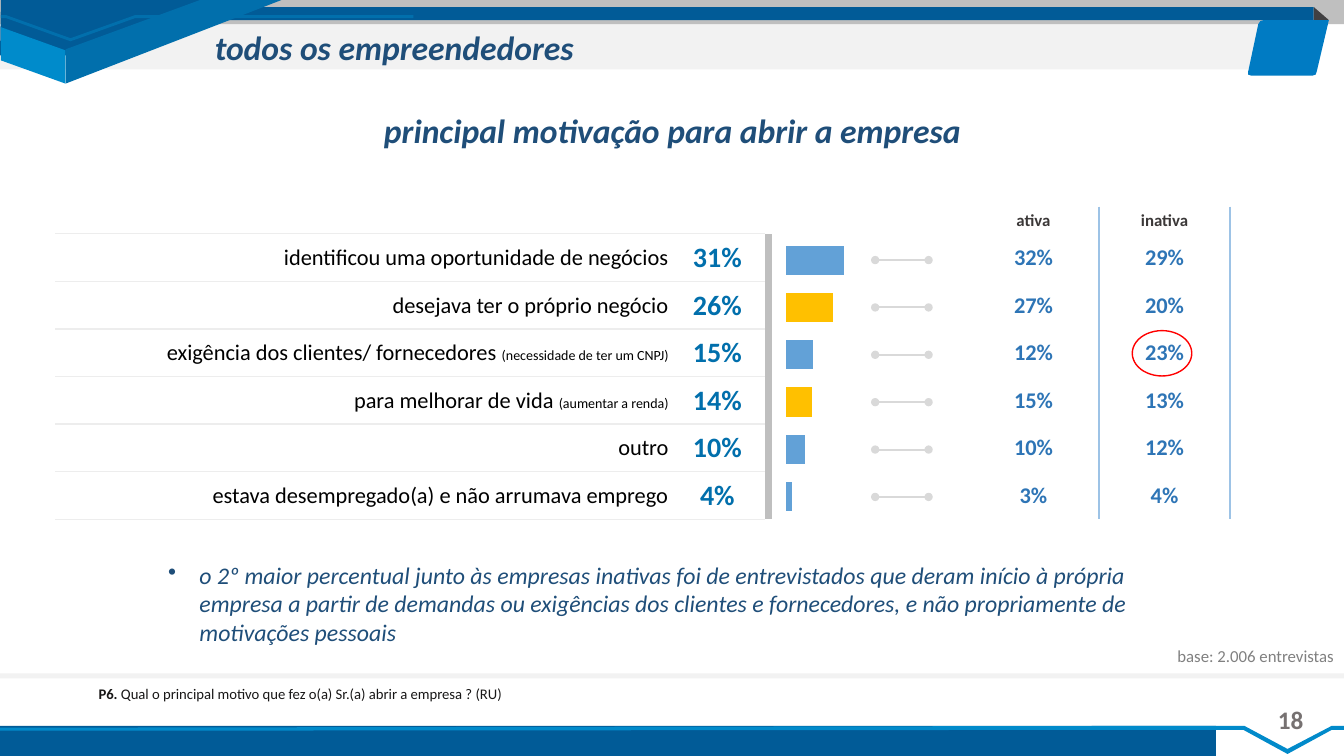
from dataclasses import dataclass

from pptx import Presentation
from pptx.chart.data import CategoryChartData
from pptx.dml.color import RGBColor
from pptx.enum.chart import XL_CHART_TYPE as ChartType
from pptx.enum.shapes import MSO_CONNECTOR as Connector, MSO_SHAPE as Preset
from pptx.enum.text import MSO_ANCHOR as Anchor, MSO_AUTO_SIZE as AutoSize, PP_ALIGN as Align
from pptx.oxml import parse_xml
from pptx.oxml.ns import nsdecls, qn
from pptx.util import Inches, Pt


@dataclass(frozen=True)
class Theme:
    font: str = "Calibri"
    navy: str = "1F4E79"
    deep: str = "015B97"
    blue: str = "016FAC"
    bright: str = "018ACA"
    facet: str = "008BCB"
    badge: str = "007BC3"
    fold: str = "414042"
    pale: str = "F2F2F2"
    grey: str = "BFBFBF"
    rule: str = "EDEDED"
    divider: str = "9DC3E6"
    link: str = "D9D9D9"
    bar: str = "62A1D7"
    accent: str = "FFC000"
    alert: str = "FF0000"
    figure: str = "2E75B6"
    heading: str = "3B3838"
    number: str = "767171"
    base: str = "808080"
    ink: str = "181717"
    black: str = "000000"
    title_size: float = 24
    percent_size: float = 20
    page_size: float = 18
    remark_size: float = 17
    body_size: float = 16
    small_size: float = 12
    question_size: float = 10.5
    detail_size: float = 10


def rgb(color):
    return RGBColor.from_string(color)


class Builder:
    def __init__(self, slide, theme):
        self.slide = slide
        self.shapes = slide.shapes
        self.theme = theme

    def style(self, font, size, color, bold=False, italic=False):
        font.name, font.size = self.theme.font, Pt(size)
        font.bold, font.italic = bold, italic
        font.color.rgb = rgb(color)

    def finish(self, shape, fill):
        shape.shadow.inherit = False
        shape.fill.solid()
        shape.fill.fore_color.rgb = rgb(fill)
        shape.line.fill.background()

    def band(self, box, fill):
        self.finish(self.shapes.add_shape(Preset.RECTANGLE, *map(Inches, box)), fill)

    def outline(self, points, fill):
        start, *rest = [(Inches(x), Inches(y)) for x, y in points]
        pen = self.shapes.build_freeform(*start)
        pen.add_line_segments(rest, close=True)
        self.finish(pen.convert_to_shape(), fill)

    def ring(self, box, color):
        ring = self.shapes.add_shape(Preset.FLOWCHART_CONNECTOR, *map(Inches, box))
        ring.shadow.inherit = False
        ring.fill.background()
        ring.line.color.rgb = rgb(color)
        ring.line.width = Pt(1)

    def link(self, start, end, y, color):
        link = self.shapes.add_connector(Connector.STRAIGHT, Inches(start), Inches(y), Inches(end), Inches(y))
        link.line.color.rgb = rgb(color)
        link.line.width = Pt(1.5)
        properties = link.element.spPr
        for tag in ("headEnd", "tailEnd"):
            properties.find(qn("a:ln")).append(parse_xml(f'<a:{tag} {nsdecls("a")} type="oval"/>'))
        properties.append(parse_xml(f'<a:effectLst {nsdecls("a")}/>'))

    def paragraph(self, frame, runs, size, color, align=Align.LEFT, bold=False, italic=False,
                  spacing=None, before=None, bullet=False):
        paragraph = frame.paragraphs[0]
        paragraph.alignment = align
        if bullet:
            properties = paragraph._p.get_or_add_pPr()
            properties.set("marL", str(Inches(0.31)))
            properties.set("indent", str(Inches(-0.31)))
            properties.append(parse_xml(f'<a:buChar {nsdecls("a")} char="•"/>'))
        if spacing:
            paragraph.line_spacing = spacing
        if before:
            paragraph.space_before = Pt(before)
        self.style(paragraph.font, size, color, bold, italic)
        for words in runs:
            paragraph.add_run().text = words
        return paragraph

    def text(self, box, *runs, wrap=True, **look):
        frame = self.shapes.add_textbox(*map(Inches, box)).text_frame
        frame.word_wrap = wrap
        return self.paragraph(frame, runs, **look)

    def title(self, box, words, **look):
        title = self.shapes.title
        title.left, title.top, title.width, title.height = map(Inches, box)
        frame = title.text_frame
        frame.word_wrap = True
        frame.auto_size = AutoSize.NONE
        frame.vertical_anchor = Anchor.MIDDLE
        self.paragraph(frame, [words], **look)
        self.shapes.element.append(title.element)

    def table(self, left, top, widths, heights):
        table = self.shapes.add_table(len(heights), len(widths), Inches(left), Inches(top),
                                      Inches(sum(widths)), Inches(sum(heights))).table
        table.first_row = table.horz_banding = False
        for column, width in zip(table.columns, widths):
            column.width = Inches(width)
        for row, height in zip(table.rows, heights):
            row.height = Inches(height)
        return table

    def cell(self, cell, runs=(), fill=None, borders="", border_color=None, **look):
        cell.margin_left = cell.margin_right = cell.margin_top = Inches(0.01)
        cell.margin_bottom = 0
        cell.vertical_anchor = Anchor.MIDDLE
        if fill:
            cell.fill.solid()
            cell.fill.fore_color.rgb = rgb(fill)
        else:
            cell.fill.background()
        for place, side in enumerate("LRTB"):
            paint = (f'<a:solidFill><a:srgbClr val="{border_color}"/></a:solidFill>'
                     if side in borders else "<a:noFill/>")
            cell._tc.get_or_add_tcPr().insert(
                place, parse_xml(f'<a:ln{side} {nsdecls("a")} w="{Pt(1)}">{paint}</a:ln{side}>'))
        if runs:
            return self.paragraph(cell.text_frame, runs, **look)

    def bars(self, box, values, highlights):
        theme = self.theme
        data = CategoryChartData(number_format="###0%")
        data.categories = [str(n + 1) for n in range(len(values))]
        data.add_series("Series 1", values)
        chart = self.shapes.add_chart(ChartType.BAR_CLUSTERED, *map(Inches, box), data).chart
        chart.has_legend = chart.has_title = False
        self.style(chart.font, theme.detail_size, theme.black)
        chart.category_axis.reverse_order = True
        chart.value_axis.minimum_scale, chart.value_axis.maximum_scale = 0, 319
        chart.value_axis.has_major_gridlines = False
        chart.category_axis.visible = chart.value_axis.visible = False
        plot = chart.plots[0]
        plot.gap_width = 62
        plot.vary_by_categories = False
        series = plot.series[0]
        for fill, color in [(series.format.fill, theme.bar)] + [
                (series.points[n].format.fill, theme.accent) for n in highlights]:
            fill.solid()
            fill.fore_color.rgb = rgb(color)
        area = chart.element.find(".//" + qn("c:plotArea"))
        for layout in area.findall(qn("c:layout")):
            area.remove(layout)
        area.insert(0, parse_xml(
            f'<c:layout {nsdecls("c")}><c:manualLayout><c:layoutTarget val="inner"/>'
            '<c:xMode val="edge"/><c:yMode val="edge"/><c:x val="0.033"/><c:y val="0"/>'
            '<c:w val="0.967"/><c:h val="1"/></c:manualLayout></c:layout>'))


REASONS = [
    (["identificou uma oportunidade de negócios"], "31%", "32%", "29%"),
    (["desejava ter o próprio negócio"], "26%", "27%", "20%"),
    (["exigência dos clientes/ fornecedores ", "(necessidade de ter um CNPJ)"], "15%", "12%", "23%"),
    (["para melhorar de vida ", "(aumentar a renda)"], "14%", "15%", "13%"),
    (["outro"], "10%", "10%", "12%"),
    (["estava desempregado(a) e não arrumava emprego"], "4%", "3%", "4%"),
]


def decorate(page, theme):
    page.band((0, 0.15, 12.9, 0.54), theme.pale)
    page.band((0, -0.03, 13.34, 0.27), theme.grey)
    page.band((1.13, 0.07, 11.9, 0.13), theme.deep)
    page.outline([(0.01, -0.02), (2.59, -0.02), (1.29, 0.55), (0, 0.55)], theme.deep)
    page.band((-0.04, 6.68, 13.37, 0.05), theme.pale)
    page.outline([(2.87, -0.03), (2.04, -0.02), (0.65, 0.49), (0.65, 0.83)], theme.blue)
    page.outline([(0.65, 0.5), (0.01, 0.27), (0.01, 0.6), (0.65, 0.83)], theme.facet)
    page.band((-0.04, 7.2, 12.1, 0.35), theme.deep)
    page.outline([(-0.17, 7.22), (12.34, 7.2), (12.77, 7.43), (13.21, 7.2), (13.33, 7.2), (13.33, 7.24),
                  (13.21, 7.24), (12.77, 7.48), (12.33, 7.24), (-0.18, 7.25)], theme.bright)
    page.outline([(0.01, 0.15), (0.06, 0.15), (0.7, 0.38), (1.34, 0.15), (4.1, 0.15), (4.1, 0.18),
                  (1.34, 0.18), (0.7, 0.41), (0.06, 0.18), (0.01, 0.18)], theme.blue)
    page.outline([(13.03, 0.2), (13.03, 0.07), (13.18, 0.2)], theme.fold)
    page.outline([(12.53, 0.2), (13.18, 0.2), (13.06, 0.71), (13.05, 0.74), (13.02, 0.75), (12.41, 0.75),
                  (12.38, 0.74), (12.38, 0.71), (12.48, 0.24), (12.5, 0.21)], theme.badge)


def compare(page, theme):
    step = 2.83 / len(REASONS)
    heights = [step] * len(REASONS)
    ranking = page.table(0.55, 2.32, [6.09, 0.95, 0.07], heights)
    page.bars((7.73, 2.35, 1.9, 2.81), [100, 82, 47, 46, 33, 11], highlights=(1, 3))
    status = page.table(9.6, 2.05, [1.3, 1.3], [0.27] + heights)
    status_rows = [("ativa", "inativa")] + [reason[2:] for reason in REASONS]
    for row, (label, total, *_) in enumerate(REASONS):
        lines = dict(borders="TB", border_color=theme.rule)
        reason = page.cell(ranking.cell(row, 0), label, size=theme.body_size, color=theme.black,
                           align=Align.RIGHT, **lines)
        for detail in reason.runs[1:]:
            detail.font.size = Pt(theme.detail_size)
        page.cell(ranking.cell(row, 1), [total], size=theme.percent_size, color=theme.blue,
                  bold=True, align=Align.CENTER, **lines)
        page.cell(ranking.cell(row, 2), fill=theme.grey)
        page.link(9.21, 8.68, 2.58 + row * 0.47, theme.link)
    for row, shares in enumerate(status_rows):
        size, color = (theme.body_size, theme.figure) if row else (theme.small_size, theme.heading)
        for column, share in enumerate(shares):
            page.cell(status.cell(row, column), [share], size=size, color=color, bold=True,
                      align=Align.CENTER, borders=("R", "LR")[column], border_color=theme.divider)
    page.ring((11.23, 3.28, 0.59, 0.45), theme.alert)


def main():
    theme = Theme()
    deck = Presentation()
    deck.slide_width, deck.slide_height = Inches(13.33), Inches(7.5)
    page = Builder(deck.slides.add_slide(deck.slide_layouts[5]), theme)
    decorate(page, theme)
    heading = dict(size=theme.title_size, color=theme.navy, bold=True, italic=True, spacing=0.9)
    page.title((2.03, 0.24, 10.41, 0.51), "todos os empreendedores", **heading)
    page.text((2.56, 1.09, 8.22, 0.9), "principal motivação para abrir a empresa",
              align=Align.CENTER, **heading)
    compare(page, theme)
    page.text((1.57, 5.51, 10.33, 0.96),
              "o 2º maior percentual junto às empresas inativas foi de entrevistados que deram início à "
              "própria empresa a partir de demandas ou exigências dos clientes e fornecedores, e não "
              "propriamente de motivações pessoais",
              size=theme.remark_size, color=theme.navy, italic=True, bullet=True)
    page.text((10.77, 6.38, 2.56, 0.36), "base: 2.006 entrevistas", size=theme.small_size,
              color=theme.base, align=Align.RIGHT, spacing=0.9, before=10)
    question = page.text((0.88, 6.74, 5.46, 0.73), "P6.",
                         " Qual o principal motivo que fez o(a) Sr.(a) abrir a empresa ? (RU)",
                         size=theme.question_size, color=theme.ink, before=10)
    question.runs[0].font.bold = True
    page.text((12.49, 6.94, 0.62, 0.4), "18", wrap=False, size=theme.page_size, color=theme.number,
              bold=True, align=Align.CENTER)
    deck.save("out.pptx")


if __name__ == "__main__":
    main()
